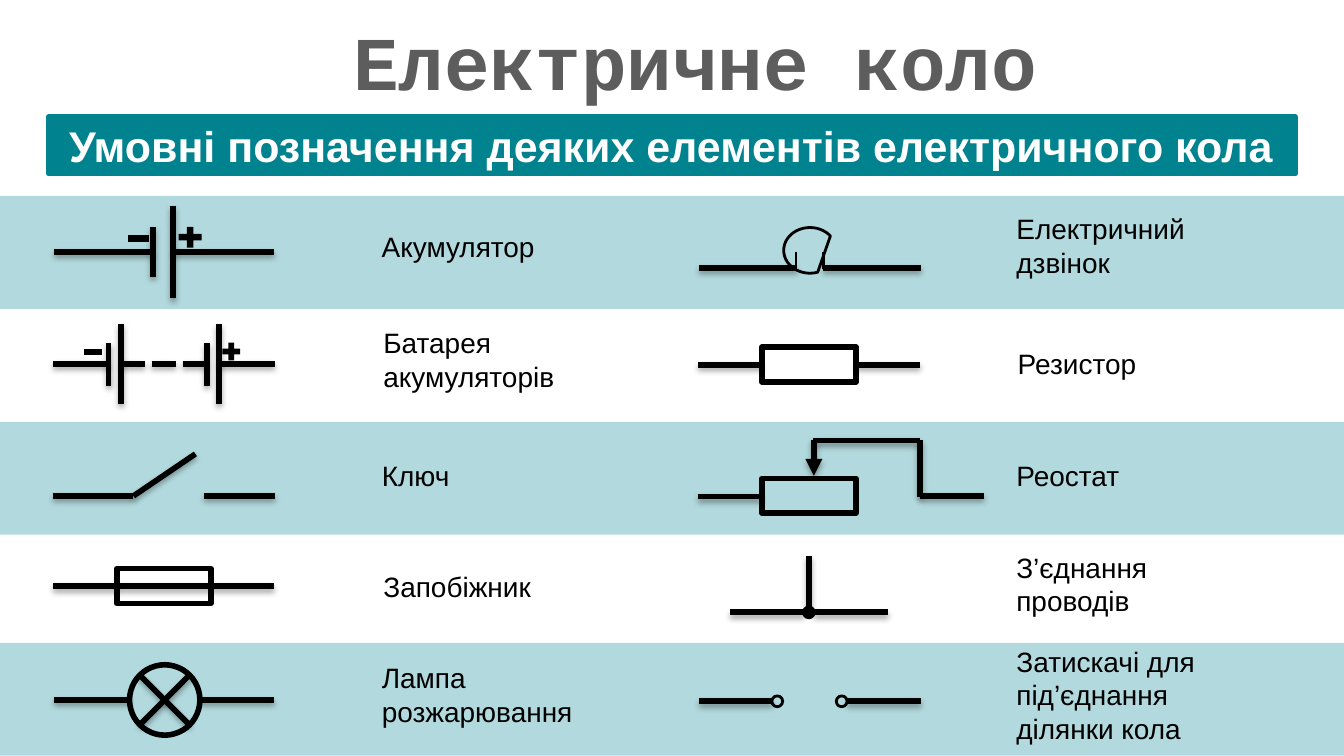
from dataclasses import dataclass
from typing import NamedTuple

from lxml.etree import SubElement
from pptx import Presentation
from pptx.dml.color import RGBColor
from pptx.enum.shapes import MSO_CONNECTOR, MSO_SHAPE
from pptx.enum.text import MSO_ANCHOR, PP_ALIGN
from pptx.oxml.ns import qn
from pptx.util import Pt


@dataclass(frozen=True)
class Theme:
    teal: str = "00838F"
    ink: str = "000000"
    white: str = "FFFFFF"
    title_grey: str = "5D5D5D"
    body_font: str = "Arial"
    title_font: str = "Courier New"
    title_size: float = 40.7
    heading_size: float = 23
    label_size: float = 15
    thick: float = 3
    thin: float = 1.5


THEME = Theme()


class Wire(NamedTuple):
    x1: float
    y1: float
    x2: float
    y2: float
    thin: bool = False
    arrow: bool = False


class Figure(NamedTuple):
    preset: MSO_SHAPE
    left: float
    top: float
    width: float
    height: float
    fill: str | None = None
    line: float | None = None
    rotation: float = 0
    angles: tuple = ()


class Symbol(NamedTuple):
    label: str
    label_left: float
    label_middle: float
    label_width: float
    figures: list[Figure]
    wires: list[Wire]


def resistor(left: float, top: float) -> Figure:
    return Figure(MSO_SHAPE.RECTANGLE, left, top, 50.4, 18.7, line=THEME.thick)


def ring(left: float, top: float, fill: str | None = None) -> Figure:
    return Figure(MSO_SHAPE.OVAL, left, top, 5.8, 5.8, fill, THEME.thin)


def sign(preset: MSO_SHAPE, left: float, top: float, width: float, height: float) -> Figure:
    return Figure(preset, left, top, width, height, THEME.ink)


PLUS, MINUS = MSO_SHAPE.MATH_PLUS, MSO_SHAPE.MATH_MINUS

SYMBOLS = [
    Symbol("Акумулятор", 200, 132.5, 93.6,
           [sign(PLUS, 93.6, 119.5, 16.6, 15.1), sign(MINUS, 66.7, 120.2, 15.1, 15.1)],
           [Wire(82, 121.7, 82, 148.3), Wire(92.7, 110.2, 92.7, 159.8),
            Wire(92.7, 135, 147, 135), Wire(29, 135, 82, 135)]),
    Symbol("Батарея\nакумуляторів", 200.9, 193, 103,
           [sign(PLUS, 117.4, 181.8, 13, 13), sign(MINUS, 43.2, 182.2, 13, 13)],
           [*(Wire(x, 183.6, x, 206.6) for x in (58.2, 110.9)),
            *(Wire(x, 173.5, x, 216.3) for x in (64.7, 117.3)),
            *(Wire(x, 195, x + 13.1, 195) for x in (64.7, 81.2, 97.8)),
            Wire(117.3, 195, 147.4, 195), Wire(28.3, 195, 58.2, 195)]),
    Symbol("Ключ", 200, 255, 46, [],
           [Wire(28.3, 265.7, 71.5, 265.7), Wire(109.4, 265.7, 147.4, 265.7),
            Wire(71.5, 265.7, 104.7, 243.2)]),
    Symbol("Запобіжник", 200.9, 314.7, 90, [resistor(62.6, 304.6)],
           [Wire(62.6, 314, 147, 314), Wire(62.6, 314, 28.3, 314)]),
    Symbol("Лампа\nрозжарювання", 200, 372.3, 114.5,
           [Figure(MSO_SHAPE.OVAL, 69.4, 356.2, 37.7, 37.7, line=THEME.thick, rotation=45)],
           [Wire(101.5, 361.7, 74.9, 388.3), Wire(74.9, 361.7, 101.5, 388.3),
            Wire(107.1, 375, 147, 375), Wire(69.4, 375, 29, 375)]),
    Symbol("Електричний\nдзвінок", 540, 131.8, 101.5,
           [Figure(MSO_SHAPE.CHORD, 421.7, 120, 24.5, 28.2, line=THEME.thin,
                   rotation=270, angles=(160.69, 54.76))],
           [Wire(440.8, 143.5, 493.2, 143.5), Wire(374.4, 143.5, 427, 143.5),
            Wire(426.4, 135, 426.4, 144, thin=True), Wire(441.2, 135, 441.2, 144, thin=True)]),
    Symbol("Резистор", 540.7, 195.1, 74, [resistor(408.2, 186)],
           [Wire(458.6, 195.6, 493, 195.6), Wire(408.2, 195.6, 374, 195.6)]),
    Symbol("Реостат", 540, 255, 65.5, [resistor(408.2, 256.3)],
           [Wire(435.6, 236, 493, 236), Wire(408.2, 266, 374, 266),
            Wire(436, 254.9, 436, 236, arrow=True),
            Wire(493, 236, 493, 266.2), Wire(527, 265.7, 493, 265.7)]),
    Symbol("З’єднання\nпроводів", 540, 313.2, 81.4, [ring(430.4, 325.2, THEME.ink)],
           [Wire(436, 328, 475.6, 328), Wire(391.2, 328, 430.6, 328),
            Wire(433.3, 327.6, 433.3, 298)]),
    Symbol("Затискачі для\nпід’єднання\nділянки кола", 540, 372.6, 145.4,
           [ring(413.5, 372.8), ring(448, 372.8)],
           [Wire(453.6, 375.7, 493.2, 375.7), Wire(374.4, 375.7, 413.5, 375.7)]),
]


def write_text(shape, text: str, *, size: float, color: str, font: str = THEME.body_font,
               bold: bool = False, align=PP_ALIGN.LEFT, anchor=MSO_ANCHOR.TOP,
               wrap: bool = True) -> None:
    frame = shape.text_frame
    frame.text = text
    frame.word_wrap = wrap
    frame.vertical_anchor = anchor
    frame.margin_left = frame.margin_right = Pt(4.5)
    frame.margin_top = frame.margin_bottom = Pt(2.25)
    for paragraph in frame.paragraphs:
        paragraph.alignment = align
        for run in paragraph.runs:
            run.font.name = font
            run.font.size = Pt(size)
            run.font.bold = bold
            run.font.color.rgb = RGBColor.from_string(color)


def draw_figure(shapes, figure: Figure, line_color: str = THEME.ink):
    shape = shapes.add_shape(figure.preset, Pt(figure.left), Pt(figure.top),
                             Pt(figure.width), Pt(figure.height))
    shape.shadow.inherit = False
    shape.rotation = figure.rotation
    for index, angle in enumerate(figure.angles):
        shape.adjustments[index] = angle * 0.6
    if figure.fill:
        shape.fill.solid()
        shape.fill.fore_color.rgb = RGBColor.from_string(figure.fill)
    else:
        shape.fill.background()
    if figure.line:
        shape.line.width = Pt(figure.line)
        shape.line.color.rgb = RGBColor.from_string(line_color)
    else:
        shape.line.fill.background()
    return shape


def draw_wire(shapes, wire: Wire) -> None:
    connector = shapes.add_connector(MSO_CONNECTOR.STRAIGHT, Pt(wire.x1), Pt(wire.y1),
                                     Pt(wire.x2), Pt(wire.y2))
    connector.line.width = Pt(THEME.thin if wire.thin else THEME.thick)
    connector.line.color.rgb = RGBColor.from_string(THEME.ink)
    properties = connector._element.spPr
    if wire.arrow:
        SubElement(properties.find(qn("a:ln")), qn("a:headEnd"), type="triangle")
    effects = SubElement(properties, qn("a:effectLst"))
    if not wire.thin:
        shadow = SubElement(effects, qn("a:outerShdw"), blurRad=str(Pt(3.1)),
                            dist=str(Pt(1.8)), dir="5400000", rotWithShape="0")
        color = SubElement(shadow, qn("a:srgbClr"), val=THEME.ink)
        SubElement(color, qn("a:alpha"), val="35000")


def draw_band(slide, top: float) -> None:
    band = draw_figure(slide.shapes, Figure(MSO_SHAPE.RECTANGLE, 0, top, 720, 60.5, THEME.teal))
    color = band._element.spPr.find(qn("a:solidFill")).find(qn("a:srgbClr"))
    SubElement(color, qn("a:alpha"), val="30000")


def draw_symbol(slide, symbol: Symbol) -> None:
    group = slide.shapes.add_group_shape()
    for figure in symbol.figures:
        draw_figure(group.shapes, figure)
    for wire in symbol.wires:
        draw_wire(group.shapes, wire)
    height = 18.2 * len(symbol.label.split("\n")) + 5
    box = slide.shapes.add_textbox(Pt(symbol.label_left), Pt(symbol.label_middle - height / 2),
                                   Pt(symbol.label_width), Pt(height))
    write_text(box, symbol.label, size=THEME.label_size, color=THEME.ink, wrap=False)


def main() -> None:
    presentation = Presentation()
    presentation.slide_width, presentation.slide_height = Pt(720), Pt(405)
    slide = presentation.slides.add_slide(presentation.slide_layouts[5])
    title = slide.shapes.title
    title.left, title.top, title.width, title.height = Pt(91.5), Pt(7.2), Pt(561.5), Pt(50.4)
    write_text(title, "Електричне коло", size=THEME.title_size, color=THEME.title_grey,
               font=THEME.title_font, bold=True, align=PP_ALIGN.CENTER,
               anchor=MSO_ANCHOR.MIDDLE)
    for top in (105, 226, 344.4):
        draw_band(slide, top)
    heading = draw_figure(slide.shapes, Figure(MSO_SHAPE.RECTANGLE, 26, 62.8, 668, 30.2,
                                               THEME.teal, THEME.thick), THEME.teal)
    write_text(heading, "Умовні позначення деяких елементів електричного кола",
               size=THEME.heading_size, color=THEME.white, bold=True,
               align=PP_ALIGN.CENTER, anchor=MSO_ANCHOR.MIDDLE)
    for symbol in SYMBOLS:
        draw_symbol(slide, symbol)
    presentation.save("out.pptx")


if __name__ == "__main__":
    main()
